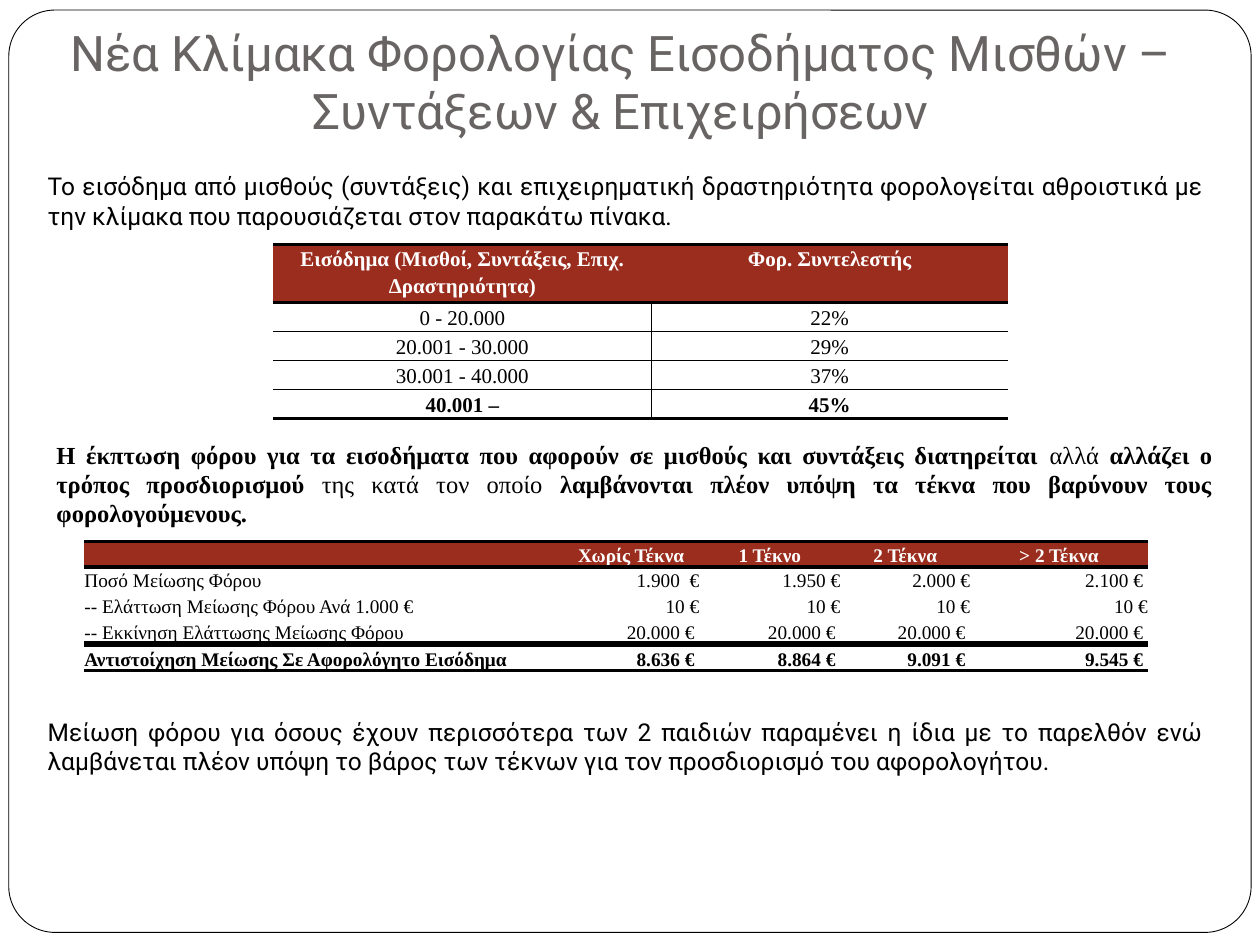
from lxml.etree import SubElement
from pptx import Presentation
from pptx.dml.color import RGBColor
from pptx.enum.shapes import MSO_SHAPE
from pptx.enum.text import MSO_ANCHOR, MSO_AUTO_SIZE, PP_ALIGN
from pptx.oxml import parse_xml
from pptx.oxml.ns import nsdecls, qn
from pptx.util import Inches, Pt

COLORS = {"header": "9B2D1F", "title": "696464", "ink": "000000", "paper": "FFFFFF"}
SANS, SERIF = "Roboto", "Times New Roman"
NO_STYLE = "{2D5ABB26-0587-4C30-8999-92F81FD0307C}"


def format_runs(paragraph, face, size, color, bold=False):
    for run in paragraph.runs:
        run.font.name = face
        run.font.size = Pt(size)
        run.font.bold = bold
        run.font.color.rgb = RGBColor.from_string(COLORS[color])


def style_cell(cell, fill, borders, side_margin):
    """Fill a cell and draw its borders, given as {"L", "R", "T", "B": points}."""
    cell.margin_left = cell.margin_right = Inches(side_margin)
    cell.margin_top = cell.margin_bottom = 0
    cell.fill.solid()
    cell.fill.fore_color.rgb = RGBColor.from_string(COLORS[fill])
    sides = [side for side in "LRTB" if side in borders]
    for position, side in enumerate(sides):
        line = parse_xml(
            f'<a:ln{side} {nsdecls("a")} w="{Pt(borders[side])}"><a:solidFill>'
            f'<a:srgbClr val="{COLORS["ink"]}"/></a:solidFill></a:ln{side}>')
        cell._tc.get_or_add_tcPr().insert(position, line)


prs = Presentation()
prs.slide_width, prs.slide_height = Inches(10), Inches(7.5)
slide = prs.slides.add_slide(prs.slide_layouts[5])
shapes = slide.shapes

# Rounded frame, behind everything
frame = shapes.add_shape(MSO_SHAPE.ROUNDED_RECTANGLE,
                         Inches(0.07), Inches(0.08), Inches(9.86), Inches(7.32))
frame.adjustments[0] = 0.05
frame.shadow.inherit = False
frame.fill.solid()
frame.fill.fore_color.rgb = RGBColor.from_string(COLORS["paper"])
frame.line.color.rgb = RGBColor.from_string(COLORS["ink"])
frame.line.width = Pt(0.5)
shapes._spTree.insert(2, frame._element)

# Title
title = shapes.title
title.left, title.top = Inches(0.35), Inches(0.36)
title.width, title.height = Inches(9.15), Inches(0.85)
heading = title.text_frame
heading.text = "Νέα Κλίμακα Φορολογίας Εισοδήματος Μισθών – Συντάξεων & Επιχειρήσεων"
heading.auto_size = MSO_AUTO_SIZE.NONE
heading.word_wrap = True
heading.vertical_anchor = MSO_ANCHOR.BOTTOM
heading.margin_bottom = Inches(0.1)
heading.paragraphs[0].alignment = PP_ALIGN.CENTER
format_runs(heading.paragraphs[0], SANS, 28, "title")

# Paragraphs: left, top, height, font, [(text, bold)]
passages = [
    (0.28, 1.31, 0.57, SANS, [
        ("Το εισόδημα από μισθούς (συντάξεις) και επιχειρηματική δραστηριότητα "
         "φορολογείται αθροιστικά με την κλίμακα που παρουσιάζεται στον παρακάτω πίνακα.",
         False)]),
    (0.35, 3.44, 0.81, SERIF, [
        ("Η έκπτωση φόρου για τα εισοδήματα που αφορούν σε μισθούς και συντάξεις "
         "διατηρείται ", True),
        ("αλλά ", False),
        ("αλλάζει ο τρόπος προσδιορισμού", True),
        (" της κατά τον οποίο ", False),
        ("λαμβάνονται πλέον υπόψη τα τέκνα που βαρύνουν τους φορολογούμενους.", True)]),
    (0.28, 5.64, 0.57, SANS, [
        ("Μείωση φόρου για όσους έχουν περισσότερα των 2 παιδιών παραμένει η ίδια με το "
         "παρελθόν ενώ λαμβάνεται πλέον υπόψη το βάρος των τέκνων για τον προσδιορισμό "
         "του αφορολογήτου.", False)]),
]
for left, top, height, face, parts in passages:
    passage = shapes.add_textbox(Inches(left), Inches(top), Inches(9.37), Inches(height))
    passage.text_frame.word_wrap = True
    paragraph = passage.text_frame.paragraphs[0]
    paragraph.alignment = PP_ALIGN.JUSTIFY
    for text, _ in parts:
        paragraph.add_run().text = text
    format_runs(paragraph, face, 14, "ink")
    for run, (_, bold) in zip(paragraph.runs, parts):
        run.font.bold = bold

# Tables
tax_scale = {
    "at": (2.17, 1.94), "columns": [3, 2.83], "heights": [0.41] + [0.21] * 4,
    "size": 12, "margin": 0.07, "spacing": 1.15, "after": 10,
    "anchors": (MSO_ANCHOR.TOP, MSO_ANCHOR.MIDDLE),
    "aligns": [PP_ALIGN.CENTER] * 2,
    "rules": [{"T": 2, "B": 2}, {"B": 1}, {"T": 1, "B": 1}, {"T": 1, "B": 1},
              {"T": 1, "B": 2}],
    "divider": True,
    "rows": [
        ["Εισόδημα (Μισθοί, Συντάξεις, Επιχ. Δραστηριότητα)", "Φορ. Συντελεστής"],
        ["0 - 20.000", "22%"],
        ["20.001 - 30.000", "29%"],
        ["30.001 - 40.000", "37%"],
        ["40.001 –", "45%"],
    ],
}
tax_reduction = {
    "at": (0.67, 4.3), "columns": [3.8, 1.08, 1.12, 1.03, 1.41],
    "heights": [0.2] * 3 + [0.21] * 2,
    "size": 11, "margin": 0, "spacing": 1.0, "after": 0,
    "anchors": (MSO_ANCHOR.BOTTOM, MSO_ANCHOR.BOTTOM),
    "aligns": [PP_ALIGN.LEFT] + [PP_ALIGN.RIGHT] * 4,
    "rules": [{"T": 2, "B": 2}, {}, {}, {}, {"T": 4, "B": 2}],
    "divider": False,
    "rows": [
        ["", "Χωρίς Τέκνα", "1 Τέκνο", "2 Τέκνα", "> 2 Τέκνα"],
        ["Ποσό Μείωσης Φόρου", "1.900  €", "1.950 €", "2.000 €", "2.100 € "],
        ["-- Ελάττωση Μείωσης Φόρου Ανά 1.000 €"] + ["10 €"] * 4,
        ["-- Εκκίνηση Ελάττωσης Μείωσης Φόρου"] + ["20.000 € "] * 4,
        ["Αντιστοίχηση Μείωσης Σε Αφορολόγητο Εισόδημα",
         "8.636 € ", "8.864 € ", "9.091 € ", "9.545 € "],
    ],
}
for data in (tax_scale, tax_reduction):
    rows, columns, heights = data["rows"], data["columns"], data["heights"]
    left, top = data["at"]
    table = shapes.add_table(len(rows), len(columns), Inches(left), Inches(top),
                             Inches(sum(columns)), Inches(sum(heights))).table
    table._tbl.tblPr.find(qn("a:tableStyleId")).text = NO_STYLE
    for column, width in zip(table.columns, columns):
        column.width = Inches(width)
    for r, texts in enumerate(rows):
        table.rows[r].height = Inches(heights[r])
        is_header, is_last = r == 0, r == len(rows) - 1
        for c, text in enumerate(texts):
            cell = table.cell(r, c)
            borders = dict(data["rules"][r])
            if data["divider"] and not is_header:
                borders["R" if c == 0 else "L"] = 1
            style_cell(cell, "header" if is_header else "paper", borders, data["margin"])
            cell.vertical_anchor = data["anchors"][0 if is_header else 1]
            paragraph = cell.text_frame.paragraphs[0]
            paragraph.alignment = PP_ALIGN.CENTER if is_header else data["aligns"][c]
            paragraph.line_spacing = data["spacing"]
            paragraph.space_after = Pt(data["after"])
            if text:
                paragraph.text = text
                format_runs(paragraph, SERIF, data["size"],
                            "paper" if is_header else "ink", is_header or is_last)
            else:
                # An empty cell needs its own text size, or its row grows
                SubElement(paragraph._p, qn("a:endParaRPr"), sz=str(data["size"] * 100))

prs.save("out.pptx")
